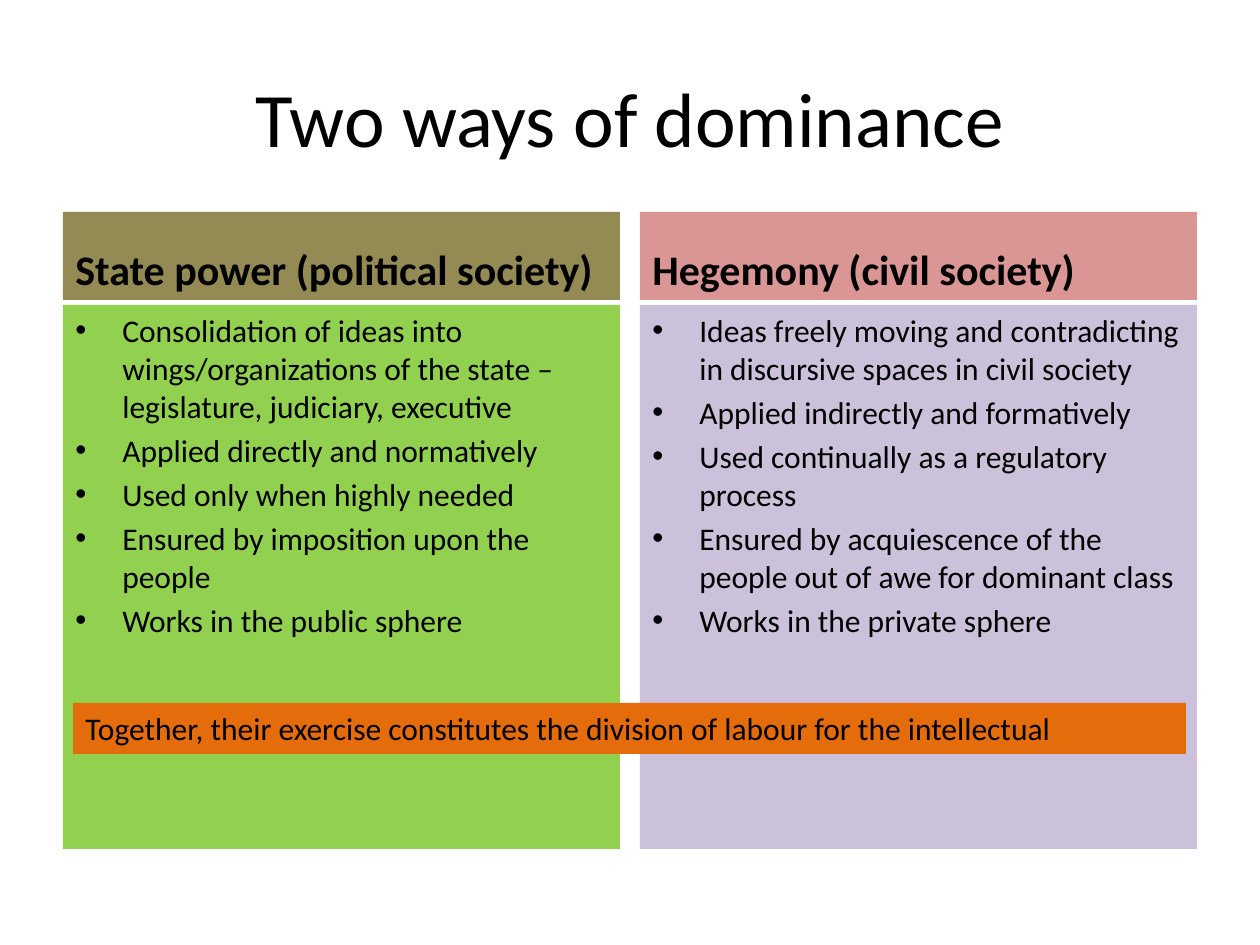
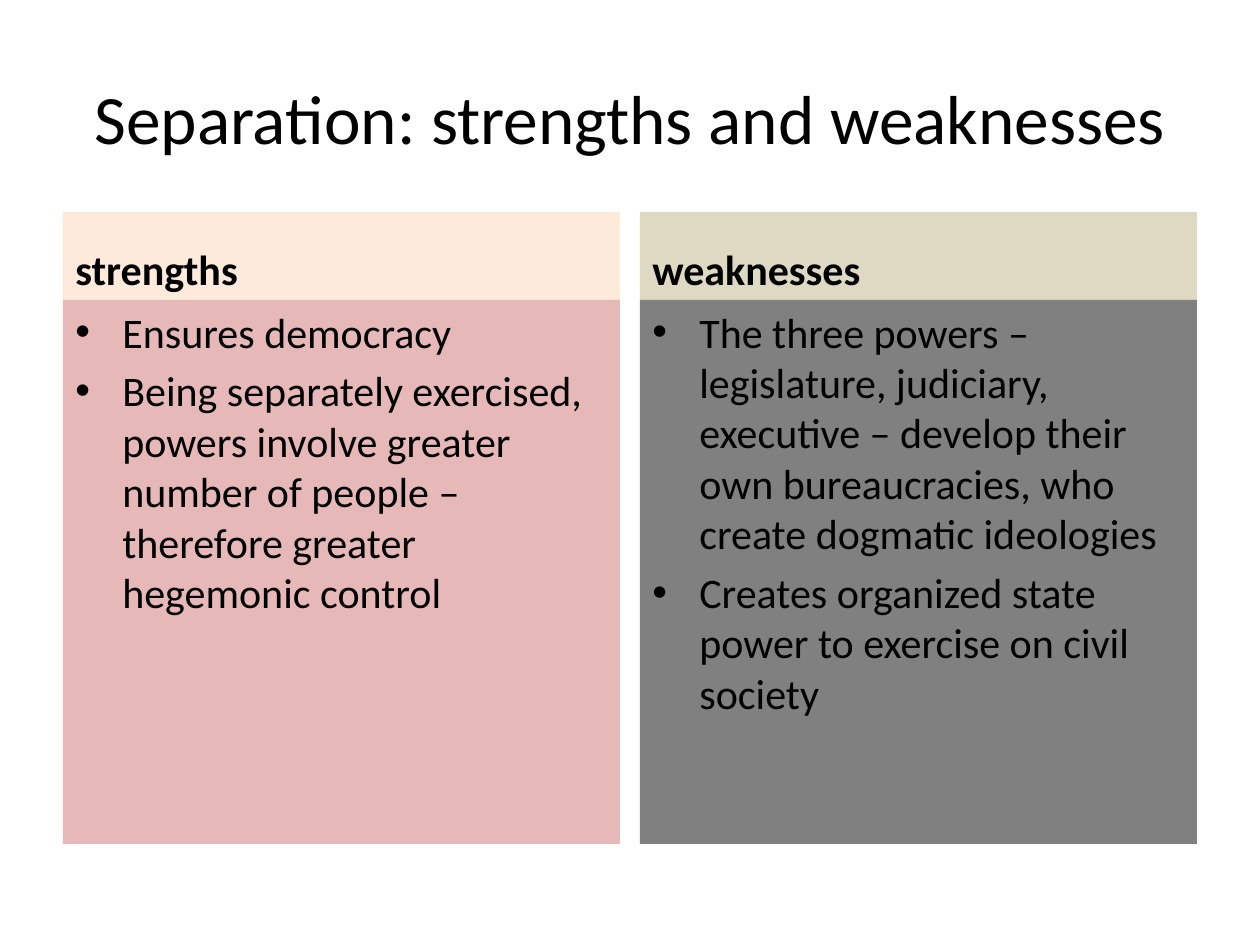
from typing import NamedTuple

from lxml.etree import SubElement
from pptx import Presentation
from pptx.dml.color import RGBColor
from pptx.enum.shapes import MSO_SHAPE
from pptx.enum.text import MSO_ANCHOR, PP_ALIGN
from pptx.oxml.ns import qn
from pptx.slide import Slide
from pptx.util import Emu, Length, Pt

PIXELS_PER_INCH = 126
SLIDE_WIDTH, SLIDE_HEIGHT = 1260, 945
MARGIN = 63
CONTENT_WIDTH = SLIDE_WIDTH - 2 * MARGIN
COLUMN_GAP = 20
COLUMN_WIDTH = (CONTENT_WIDTH - COLUMN_GAP) // 2
HEADING_TOP, HEADING_HEIGHT = 212, 88
BODY_HEIGHT = 544
BULLET_INDENT = 47

FONT = "Calibri"
HEADING_SIZE = 24
SPACE_BEFORE_RATIO = 0.2

BLACK = RGBColor(0x00, 0x00, 0x00)
OLIVE = RGBColor(0x94, 0x8A, 0x54)
GREEN = RGBColor(0x92, 0xD0, 0x50)
ROSE = RGBColor(0xD9, 0x96, 0x94)
LAVENDER = RGBColor(0xCC, 0xC1, 0xDA)
ORANGE = RGBColor(0xE4, 0x6C, 0x0A)
CREAM = RGBColor(0xFD, 0xEA, 0xDA)
PINK = RGBColor(0xE6, 0xB9, 0xB8)
SAND = RGBColor(0xDD, 0xD9, 0xC3)
GRAY = RGBColor(0x80, 0x80, 0x80)


class Box(NamedTuple):
    left: int
    top: int
    width: int
    height: int


class Column(NamedTuple):
    heading: str
    heading_fill: RGBColor
    body_fill: RGBColor
    points: list[str]


class Comparison(NamedTuple):
    title: str
    title_size: float
    body_top: int
    body_size: int
    columns: list[Column]
    conclusion: str = ""


TITLE_BOX = Box(MARGIN, 38, CONTENT_WIDTH, 157)
CONCLUSION_BOX = Box(73, 703, 1113, 51)

COMPARISONS = [
    Comparison("Two ways of dominance", 44, 305, 18, [
        Column("State power (political society)", OLIVE, GREEN, [
            "Consolidation of ideas into wings/organizations of the state – "
            "legislature, judiciary, executive",
            "Applied directly and normatively",
            "Used only when highly needed",
            "Ensured by imposition upon the people",
            "Works in the public sphere",
        ]),
        Column("Hegemony (civil society)", ROSE, LAVENDER, [
            "Ideas freely moving and contradicting in discursive spaces in civil society",
            "Applied indirectly and formatively",
            "Used continually as a regulatory process",
            "Ensured by acquiescence of the people out of awe for dominant class",
            "Works in the private sphere",
        ]),
    ], "Together, their exercise constitutes the division of labour for the intellectual"),
    Comparison("Separation: strengths and weaknesses", 39.6, 300, 24, [
        Column("strengths", CREAM, PINK, [
            "Ensures democracy",
            "Being separately exercised, powers involve greater number of people – "
            "therefore greater hegemonic control",
        ]),
        Column("weaknesses", SAND, GRAY, [
            "The three powers – legislature, judiciary, executive – develop their own "
            "bureaucracies, who create dogmatic ideologies",
            "Creates organized state power to exercise on civil society",
        ]),
    ]),
]


def px(length: int) -> Length:
    return Emu(round(length * 914400 / PIXELS_PER_INCH))


def write_text(shape, lines: list[str], size: float, anchor: MSO_ANCHOR = MSO_ANCHOR.TOP,
               alignment: PP_ALIGN = PP_ALIGN.LEFT, bold: bool = False) -> None:
    """Fill a shape with one paragraph per line, all in one style."""
    text_frame = shape.text_frame
    text_frame.word_wrap = True
    text_frame.vertical_anchor = anchor
    text_frame.text = "\n".join(lines)
    for paragraph in text_frame.paragraphs:
        paragraph.alignment = alignment
        for run in paragraph.runs:
            run.font.name = FONT
            run.font.size = Pt(size)
            run.font.bold = bold
            run.font.color.rgb = BLACK


def add_panel(slide: Slide, box: Box, fill: RGBColor):
    panel = slide.shapes.add_shape(MSO_SHAPE.RECTANGLE, *map(px, box))
    panel.shadow.inherit = False
    panel.fill.solid()
    panel.fill.fore_color.rgb = fill
    panel.line.fill.background()
    return panel


def add_spacing(shape, size: int) -> None:
    for paragraph in shape.text_frame.paragraphs:
        paragraph.space_before = Pt(size * SPACE_BEFORE_RATIO)


def add_bullets(shape) -> None:
    for paragraph in shape.text_frame.paragraphs:
        properties = paragraph._p.get_or_add_pPr()
        properties.set("marL", str(px(BULLET_INDENT)))
        properties.set("indent", str(-px(BULLET_INDENT)))
        SubElement(properties, qn("a:buFont"), typeface="Arial")
        SubElement(properties, qn("a:buChar"), char="•")


def add_column(slide: Slide, column: Column, left: int, body_top: int, body_size: int) -> None:
    heading_box = Box(left, HEADING_TOP, COLUMN_WIDTH, HEADING_HEIGHT)
    heading = add_panel(slide, heading_box, column.heading_fill)
    write_text(heading, [column.heading], HEADING_SIZE, MSO_ANCHOR.BOTTOM, bold=True)
    add_spacing(heading, HEADING_SIZE)

    body = add_panel(slide, Box(left, body_top, COLUMN_WIDTH, BODY_HEIGHT), column.body_fill)
    write_text(body, column.points, body_size)
    add_spacing(body, body_size)
    add_bullets(body)


def add_comparison(presentation, comparison: Comparison) -> None:
    slide = presentation.slides.add_slide(presentation.slide_layouts[6])
    title = slide.shapes.add_textbox(*map(px, TITLE_BOX))
    write_text(title, [comparison.title], comparison.title_size,
               MSO_ANCHOR.MIDDLE, PP_ALIGN.CENTER)
    for index, column in enumerate(comparison.columns):
        left = MARGIN + index * (COLUMN_WIDTH + COLUMN_GAP)
        add_column(slide, column, left, comparison.body_top, comparison.body_size)
    if comparison.conclusion:
        banner = add_panel(slide, CONCLUSION_BOX, ORANGE)
        write_text(banner, [comparison.conclusion], 18)


def main() -> None:
    presentation = Presentation()
    presentation.slide_width = px(SLIDE_WIDTH)
    presentation.slide_height = px(SLIDE_HEIGHT)
    for comparison in COMPARISONS:
        add_comparison(presentation, comparison)
    presentation.save("out.pptx")


if __name__ == "__main__":
    main()
